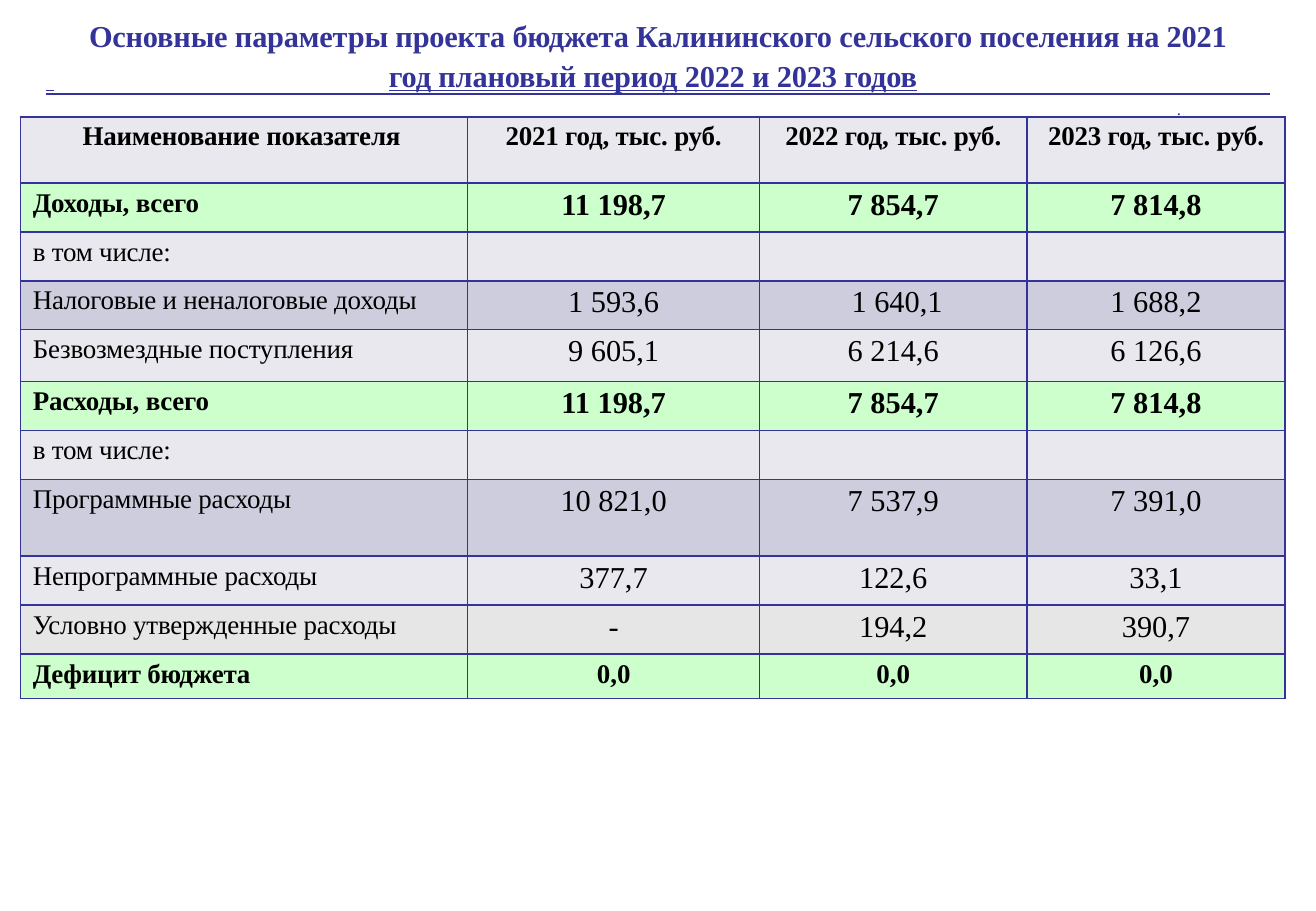
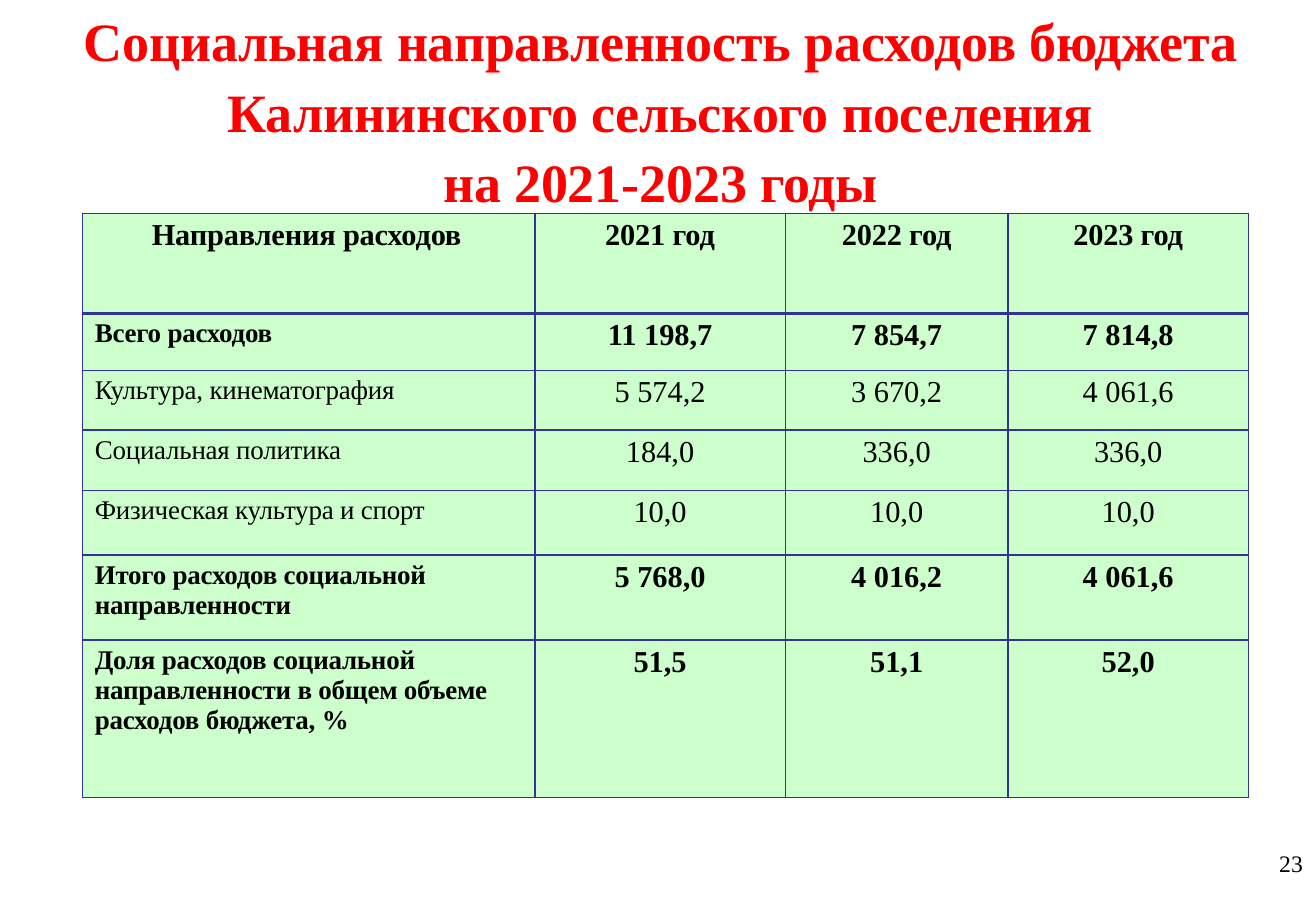
import pptx
import pptx.util
import pptx.dml.color
import pptx.enum.shapes
import pptx.enum.text
import pptx.oxml

Pt = pptx.util.Pt
RGB = pptx.dml.color.RGBColor
ALIGN = pptx.enum.text.PP_ALIGN
ANCHOR = pptx.enum.text.MSO_ANCHOR

FONT = "Times New Roman"
NAVY = RGB(0x33, 0x33, 0x99)
RED = RGB(0xFF, 0x00, 0x00)
BLACK = RGB(0x00, 0x00, 0x00)
GREEN = RGB(0xCC, 0xFF, 0xCC)
PALE = RGB(0xE8, 0xE8, 0xEE)
LILAC = RGB(0xCD, 0xCD, 0xDE)
GREY = RGB(0xE6, 0xE6, 0xE6)
NS = 'xmlns:a="http://schemas.openxmlformats.org/drawingml/2006/main"'

# Each row: height, fill, bold, number size, texts
BUDGET_ROWS = [
    (39.25, PALE, True, 16, ["Наименование показателя", "2021 год, тыс. руб.",
                             "2022 год, тыс. руб.", "2023 год, тыс. руб."]),
    (29, GREEN, True, 18, ["Доходы, всего", "11 198,7", "7 854,7", "7 814,8"]),
    (29, PALE, False, 18, ["в том числе:", "", "", ""]),
    (29, LILAC, False, 18, ["Налоговые и неналоговые доходы", "1 593,6", " 1 640,1", "1 688,2"]),
    (30.75, PALE, False, 18, ["Безвозмездные поступления", "9 605,1", "6 214,6", "6 126,6"]),
    (29, GREEN, True, 18, ["Расходы, всего", "11 198,7", "7 854,7", "7 814,8"]),
    (29, PALE, False, 18, ["в том числе:", "", "", ""]),
    (45.5, LILAC, False, 18, ["Программные расходы", "10 821,0", "7 537,9", "7 391,0"]),
    (29, PALE, False, 18, ["Непрограммные расходы", "377,7", "122,6", "33,1"]),
    (29, GREY, False, 18, ["Условно утвержденные расходы", "-", "194,2", "390,7"]),
    (26.5, GREEN, True, 16, ["Дефицит бюджета", "0,0", "0,0", "0,0"]),
]
SOCIAL_ROWS = [
    (59.5, GREEN, True, 18, ["Направления расходов", "2021 год", "2022 год", "2023 год"]),
    (33.75, GREEN, True, 18, ["Всего расходов", "11 198,7", "7 854,7", "7 814,8"]),
    (35.25, GREEN, False, 18, ["Культура, кинематография", "5 574,2", "3 670,2", "4 061,6"]),
    (35.75, GREEN, False, 18, ["Социальная политика", "184,0", "336,0", "336,0"]),
    (38.25, GREEN, False, 18, ["Физическая культура и спорт", "10,0", "10,0", "10,0"]),
    (50.5, GREEN, True, 18, ["Итого расходов социальной направленности",
                             "5 768,0", "4 016,2", "4 061,6"]),
    (93.25, GREEN, True, 18, ["Доля расходов социальной направленности в общем объеме "
                              "расходов бюджета, %", "51,5", "51,1", "52,0"]),
]


def style(p, size, color, bold=False, spacing=0):
    for r in p.runs:
        r.font.name, r.font.size, r.font.bold = FONT, Pt(size), bold
        r.font.color.rgb = color
        if spacing:
            r._r.get_or_add_rPr().set("spc", str(spacing))


def set_frame(tf, wrap):
    tf.margin_left = tf.margin_right = tf.margin_bottom = 0
    tf.margin_top = Pt(1)
    tf.word_wrap = wrap
    tf.auto_size = pptx.enum.text.MSO_AUTO_SIZE.NONE
    tf.vertical_anchor = ANCHOR.TOP


def add_title(s, box, text, size, color):
    sp = s.shapes.title
    sp.left, sp.top, sp.width, sp.height = map(Pt, box)
    tf = sp.text_frame
    set_frame(tf, True)
    tf.text = text
    for p in tf.paragraphs:
        p.alignment = ALIGN.CENTER
        p.line_spacing = 1.09
        style(p, size, color, True, -10)
    return tf


def add_text(s, box, text, size, color):
    tf = s.shapes.add_textbox(*map(Pt, box)).text_frame
    set_frame(tf, False)
    tf.text = text
    style(tf.paragraphs[0], size, color)


def underline_with_tabs(p, stops):
    """Underline a paragraph and give it left tab stops."""
    tabs = "".join(f'<a:tab pos="{Pt(x)}" algn="l"/>' for x in stops)
    p._p.get_or_add_pPr().append(pptx.oxml.parse_xml(f"<a:tabLst {NS}>{tabs}</a:tabLst>"))
    for r in p.runs:
        r.font.underline = True


def add_rule(s, x1, x2, y):
    line = s.shapes.add_connector(pptx.enum.shapes.MSO_CONNECTOR.STRAIGHT,
                                  Pt(x1), Pt(y), Pt(x2), Pt(y))
    line.line.color.rgb = NAVY
    line.line.width = Pt(1)
    line._element.spPr.append(pptx.oxml.parse_xml(f"<a:effectLst {NS}/>"))


def set_borders(cell, top, bottom):
    tcPr = cell._tc.get_or_add_tcPr()
    for side, width in (("L", 1), ("R", 1), ("T", top), ("B", bottom)):
        tcPr.append(pptx.oxml.parse_xml(
            f'<a:ln{side} {NS} w="{Pt(width)}"><a:solidFill>'
            f'<a:srgbClr val="{NAVY}"/></a:solidFill></a:ln{side}>'))


def add_budget_table(s, left, top, widths, rows, header_indent, header_rule=1):
    """Draw a table with labels at the left and centred numbers."""
    height = sum(row[0] for row in rows)
    table = s.shapes.add_table(len(rows), len(widths), Pt(left), Pt(top),
                               Pt(sum(widths)), Pt(height)).table
    for col, width in zip(table.columns, widths):
        col.width = Pt(width)
    for i, (row_height, fill, bold, number_size, texts) in enumerate(rows):
        table.rows[i].height = Pt(row_height)
        for j, text in enumerate(texts):
            cell = table.cell(i, j)
            is_label = j == 0
            cell.margin_left = cell.margin_right = cell.margin_bottom = 0
            cell.margin_top = Pt(3)
            if is_label:
                cell.margin_left = Pt(7.2 if i else header_indent)
            set_borders(cell, header_rule if i == 1 else 1, header_rule if i == 0 else 1)
            cell.fill.solid()
            cell.fill.fore_color.rgb = fill
            p = cell.text_frame.paragraphs[0]
            p.text = text
            p.alignment = ALIGN.LEFT if is_label else ALIGN.CENTER
            size = 16 if is_label and i else number_size
            style(p, size, BLACK, bold, -10 if is_label or i == 0 else 0)


def main():
    prs = pptx.Presentation()
    prs.slide_width, prs.slide_height = Pt(780), Pt(540)
    title_only = prs.slide_layouts[5]

    s = prs.slides.add_slide(title_only)
    tf = add_title(s, (26.75, 7.25, 726.5, 45.25),
                   "Основные параметры проекта бюджета Калининского сельского поселения на 2021\n"
                   " \tгод плановый период 2022 и 2023 годов\t", 18, NAVY)
    underline_with_tabs(tf.paragraphs[1], (203, 725))
    add_text(s, (697.5, 57.5, 4.5, 13.5), ".", 10, NAVY)
    add_rule(s, 27.5, 752.5, 55.75)
    add_budget_table(s, 12.25, 69.25, (265, 173, 158.5, 153), BUDGET_ROWS, 36.75)

    s = prs.slides.add_slide(title_only)
    add_title(s, (42.5, 0, 698, 117.25),
              "Социальная направленность расходов бюджета Калининского сельского поселения\n"
              "на 2021-2023 годы", 32, RED)
    add_budget_table(s, 49, 126.5, (268, 148.5, 132, 142.5), SOCIAL_ROWS, 41, 2.25)
    add_text(s, (758.25, 502, 16.5, 18.75), "23", 14, BLACK)

    prs.save("out.pptx")


if __name__ == "__main__":
    main()
